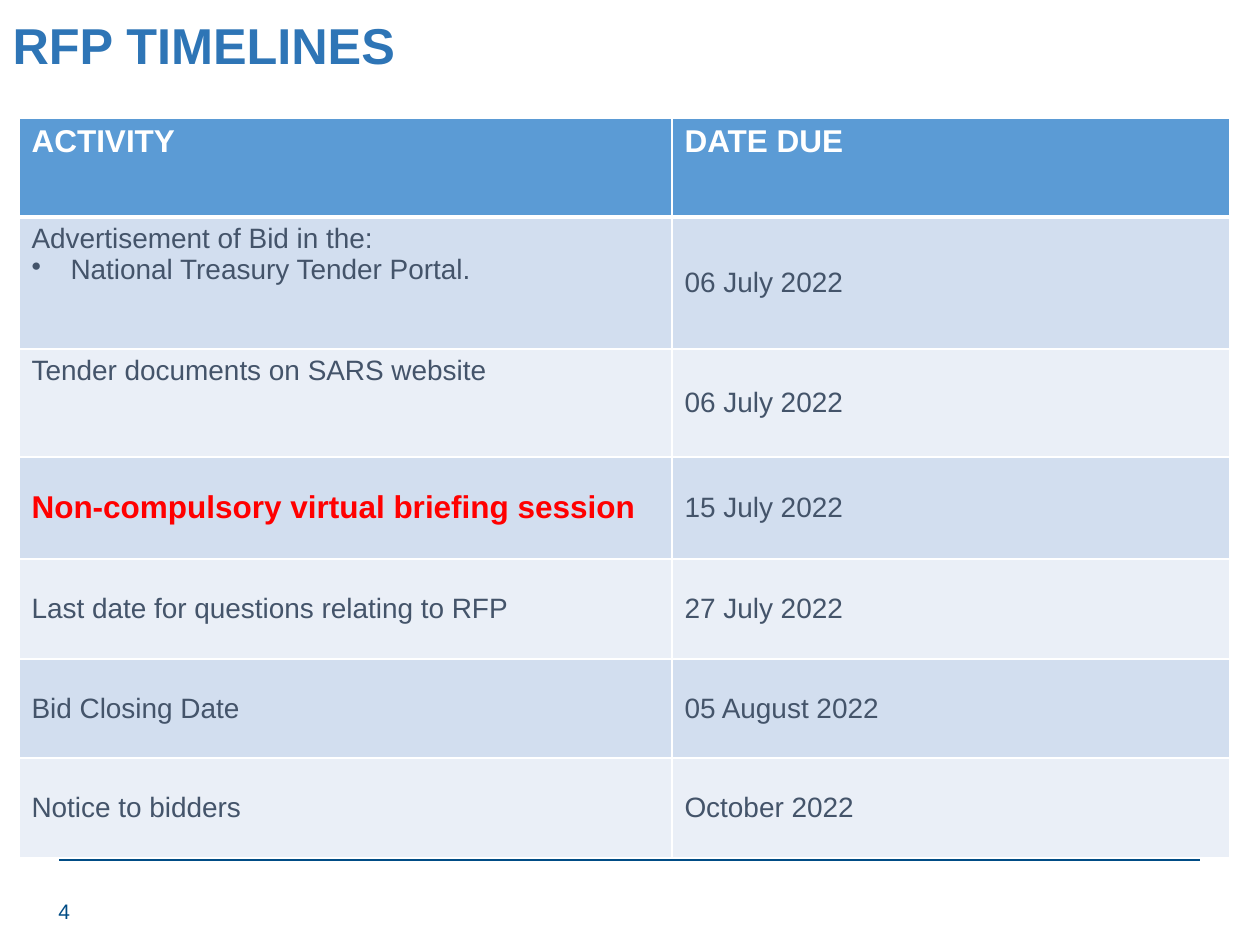
from dataclasses import dataclass

import pptx
import pptx.dml.color
import pptx.enum.shapes
import pptx.enum.text
import pptx.oxml
import pptx.oxml.ns
import pptx.util

RGB = pptx.dml.color.RGBColor.from_string
ANCHOR = pptx.enum.text.MSO_ANCHOR
EMU_PER_PX = 914400 / 126


def px(length: int) -> pptx.util.Emu:
    return pptx.util.Emu(round(length * EMU_PER_PX))


@dataclass(frozen=True)
class TextStyle:
    size: float
    color: str
    bold: bool = False


@dataclass(frozen=True)
class Theme:
    font: str = "Arial"
    title: TextStyle = TextStyle(28.8, "2E75B6", True)
    header: TextStyle = TextStyle(18, "FFFFFF", True)
    body: TextStyle = TextStyle(16, "44546A")
    alert: TextStyle = TextStyle(18, "FF0000", True)
    page: TextStyle = TextStyle(12, "004C85")
    rule: str = "004C85"
    border: str = "FFFFFF"
    header_fill: str = "5B9BD5"
    bands: tuple[str, str] = ("D2DEEF", "EAEFF7")


THEME = Theme()


@dataclass(frozen=True)
class Milestone:
    activity: str
    due: str
    height: int
    detail: str = ""
    style: TextStyle = THEME.body
    anchor: ANCHOR = ANCHOR.MIDDLE


MILESTONES = [
    Milestone("Advertisement of Bid in the:", "06 July 2022", 132,
              detail="National Treasury Tender Portal.", anchor=ANCHOR.TOP),
    Milestone("Tender documents on SARS website", "06 July 2022", 108, anchor=ANCHOR.TOP),
    Milestone("Non-compulsory virtual briefing session", "15 July 2022", 102,
              style=THEME.alert),
    Milestone("Last date for questions relating to RFP", "27 July 2022", 100),
    Milestone("Bid Closing Date", "05 August 2022", 99),
    Milestone("Notice to bidders", "October 2022", 100),
]
HEADER_HEIGHT = 99
COLUMN_WIDTHS = (653, 558)


def style_paragraph(paragraph, style: TextStyle) -> None:
    font = paragraph.font
    font.name = THEME.font
    font.size = pptx.util.Pt(style.size)
    font.bold = style.bold
    font.color.rgb = RGB(style.color)


def add_bullet(paragraph) -> None:
    properties = paragraph._p.get_or_add_pPr()
    indent = px(39)
    properties.set("marL", str(indent))
    properties.set("indent", str(-indent))
    bullet = properties.makeelement(pptx.oxml.ns.qn("a:buChar"), {"char": "•"})
    properties.append(bullet)


def set_borders(cell, top: int, bottom: int) -> None:
    properties = cell._tc.get_or_add_tcPr()
    for position, (side, width) in enumerate(
        (("L", 1), ("R", 1), ("T", top), ("B", bottom))
    ):
        properties.insert(position, pptx.oxml.parse_xml(
            f'<a:ln{side} {pptx.oxml.ns.nsdecls("a")} w="{pptx.util.Pt(width)}">'
            f'<a:solidFill><a:srgbClr val="{THEME.border}"/></a:solidFill></a:ln{side}>'
        ))


def fill_cell(cell, text: str, style: TextStyle, fill: str, anchor: ANCHOR,
              top: int = 1, bottom: int = 1, detail: str = "") -> None:
    cell.fill.solid()
    cell.fill.fore_color.rgb = RGB(fill)
    cell.vertical_anchor = anchor
    set_borders(cell, top, bottom)
    lead = cell.text_frame.paragraphs[0]
    lead.text = text
    style_paragraph(lead, style)
    if detail:
        item = cell.text_frame.add_paragraph()
        item.text = detail
        add_bullet(item)
        style_paragraph(item, style)


def add_footer_rule(slide) -> None:
    rule = slide.shapes.add_connector(
        pptx.enum.shapes.MSO_CONNECTOR.STRAIGHT, px(59), px(859), px(1200), px(859))
    rule.line.color.rgb = RGB(THEME.rule)
    rule.line.width = pptx.util.Pt(2)
    properties = rule._element.spPr
    properties.append(properties.makeelement(pptx.oxml.ns.qn("a:effectLst"), {}))


def add_title(slide) -> None:
    title = slide.shapes.title
    title.left, title.top, title.width, title.height = px(0), px(15), px(1086), px(73)
    frame = title.text_frame
    frame.text = "RFP TIMELINES"
    frame.vertical_anchor = ANCHOR.TOP
    frame.auto_size = pptx.enum.text.MSO_AUTO_SIZE.NONE
    heading = frame.paragraphs[0]
    heading.alignment = pptx.enum.text.PP_ALIGN.LEFT
    heading.line_spacing = 0.9
    style_paragraph(heading, THEME.title)


def add_page_number(slide) -> None:
    frame = slide.shapes.add_textbox(px(46), px(886), px(284), px(50)).text_frame
    frame.word_wrap = True
    frame.vertical_anchor = ANCHOR.MIDDLE
    frame.text = "4"
    style_paragraph(frame.paragraphs[0], THEME.page)


def add_timeline(slide) -> None:
    heights = [HEADER_HEIGHT] + [milestone.height for milestone in MILESTONES]
    timeline = slide.shapes.add_table(
        len(heights), len(COLUMN_WIDTHS), px(19), px(118),
        px(sum(COLUMN_WIDTHS)), px(sum(heights))).table
    for column, width in zip(timeline.columns, COLUMN_WIDTHS):
        column.width = px(width)
    for row, height in zip(timeline.rows, heights):
        row.height = px(height)

    for column, label in enumerate(("ACTIVITY", "DATE DUE")):
        fill_cell(timeline.cell(0, column), label, THEME.header, THEME.header_fill,
                  ANCHOR.TOP, bottom=3)
    for row, milestone in enumerate(MILESTONES, start=1):
        band = THEME.bands[(row - 1) % 2]
        top = 3 if row == 1 else 1
        fill_cell(timeline.cell(row, 0), milestone.activity, milestone.style, band,
                  milestone.anchor, top=top, detail=milestone.detail)
        fill_cell(timeline.cell(row, 1), milestone.due, THEME.body, band,
                  ANCHOR.MIDDLE, top=top)


def main() -> None:
    deck = pptx.Presentation()
    deck.slide_width, deck.slide_height = px(1260), px(945)
    slide = deck.slides.add_slide(deck.slide_layouts[5])  # title only

    # Footer and heading
    add_footer_rule(slide)
    add_title(slide)
    add_page_number(slide)
    # Activities and due dates
    add_timeline(slide)

    deck.save("out.pptx")


if __name__ == "__main__":
    main()
